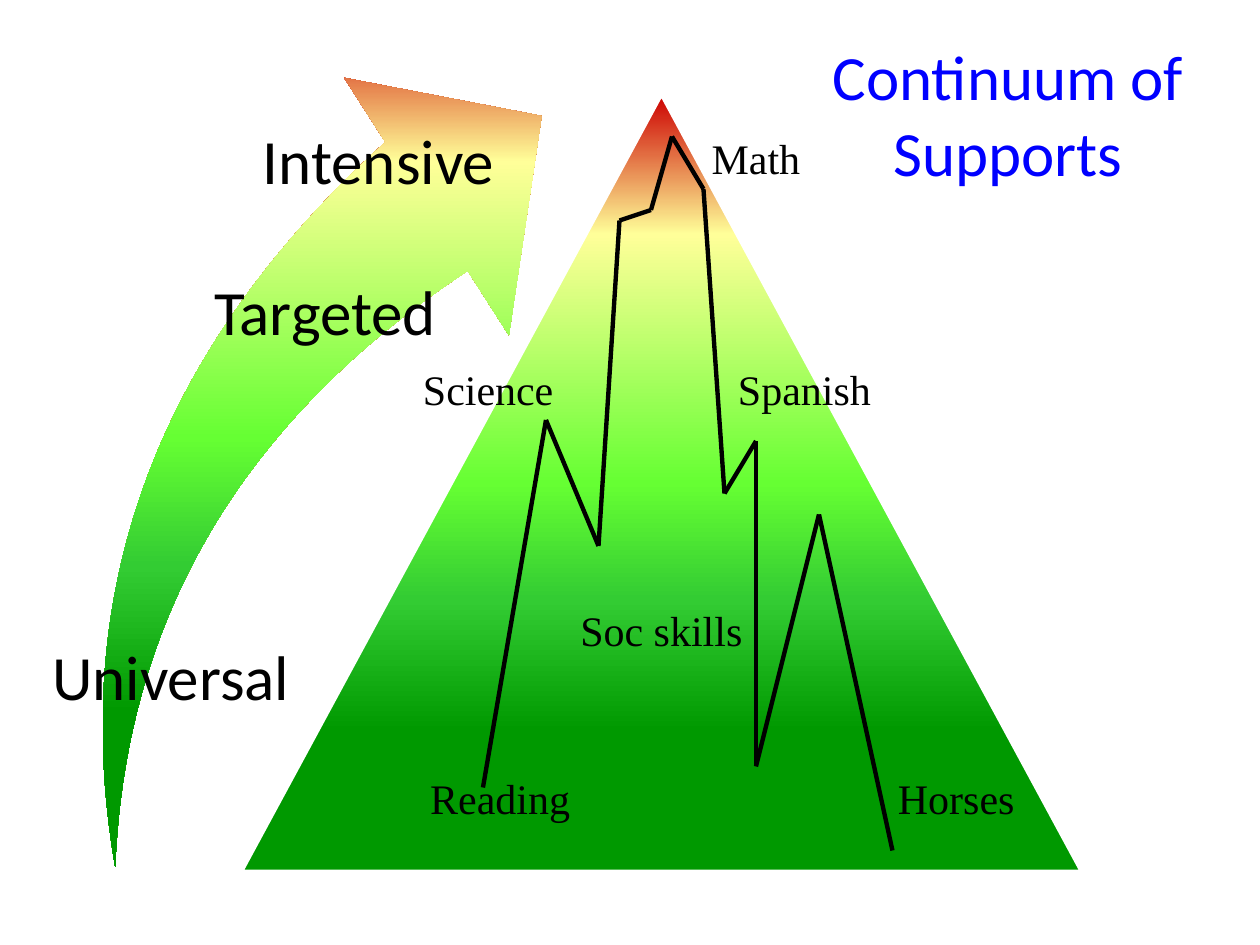
from itertools import pairwise

from lxml import etree
from pptx import Presentation
from pptx.dml.color import RGBColor
from pptx.enum import shapes, text
from pptx.oxml.ns import qn
from pptx.util import Pt

BLACK = RGBColor(0x00, 0x00, 0x00)
BLUE = RGBColor(0x00, 0x00, 0xFF)
WHITE = RGBColor(0xFF, 0xFF, 0xFF)

# Support levels from intensive (top) to universal (bottom): percent, colour
LEVELS = [
    (0, RGBColor(0xCC, 0x00, 0x00)),
    (18, RGBColor(0xFF, 0xFF, 0x99)),
    (50, RGBColor(0x66, 0xFF, 0x33)),
    (65, RGBColor(0x33, 0xCC, 0x33)),
    (82, RGBColor(0x00, 0x99, 0x00)),
]

# left, top, width, height, left inset
TIERS = {
    "Universal": (-8.6, 369.4, 206.6, 50.4, 5.8),
    "Targeted": (91.4, 160.6, 178.6, 49.7, 10.1),
    "Intensive": (118.1, 74.2, 182.2, 38.9, 14.4),
}

# left, top, width
SUBJECTS = {
    "Reading": (238.3, 438, 95),
    "Science": (234, 204, 90),
    "Math": (399, 72, 66),
    "Soc skills": (324, 342, 108),
    "Horses": (505.4, 438, 82),
    "Spanish": (414, 204, 91.4),
}

# Corners of the jagged profile, left to right
PROFILE = [
    (276, 450), (312, 240), (342, 312), (354, 126), (372, 120), (384, 78),
    (402, 108), (414, 282), (432, 252), (432, 438), (468, 294), (510, 486),
]


def place(sp, left, top, width, height):
    sp.left, sp.top, sp.width, sp.height = map(Pt, (left, top, width, height))


def write(sp, words, size, font="Calibri", color=BLACK, wrap=True,
          insets=(7.2, 3.6, 7.2, 3.6), spacing=1.0):
    tf = sp.text_frame
    tf.word_wrap = wrap
    tf.auto_size = text.MSO_AUTO_SIZE.NONE
    tf.vertical_anchor = text.MSO_ANCHOR.TOP
    tf.margin_left, tf.margin_top, tf.margin_right, tf.margin_bottom = map(Pt, insets)
    p = tf.paragraphs[0]
    p.alignment = text.PP_ALIGN.CENTER
    p.line_spacing = spacing
    r = p.add_run()
    r.text = words
    r.font.name, r.font.size, r.font.color.rgb = font, Pt(size), color


def add_label(s, words, box, **fmt):
    sp = s.shapes.add_textbox(*map(Pt, box))
    write(sp, words, **fmt)


def add_level_shape(s, kind, box, adjustments, rotation=0):
    """Shape filled with the support levels, always running straight down."""
    sp = s.shapes.add_shape(kind, *map(Pt, box))
    sp.shadow.inherit = False
    sp.rotation = rotation
    for i, value in enumerate(adjustments):
        sp.adjustments[i] = value
    sp.fill.gradient()
    grad = sp._element.spPr.find(qn("a:gradFill"))
    grad.set("rotWithShape", "0")
    stops = grad.find(qn("a:gsLst"))
    for stop in list(stops):
        stops.remove(stop)
    for percent, color in LEVELS:
        stop = etree.SubElement(stops, qn("a:gs"), pos=str(percent * 1000))
        etree.SubElement(stop, qn("a:srgbClr"), val=str(color))
    lin = grad.find(qn("a:lin"))
    lin.set("ang", str(90 * 60000))
    lin.set("scaled", "0")
    sp.line.fill.background()
    return sp


def add_profile(s, points):
    for start, end in pairwise(points):
        line = s.shapes.add_connector(
            shapes.MSO_CONNECTOR.STRAIGHT, *map(Pt, start + end))
        line.line.color.rgb = BLACK
        line.line.width = Pt(2.5)
        etree.SubElement(line._element.spPr, qn("a:effectLst"))


def main():
    prs = Presentation()
    prs.slide_width, prs.slide_height = Pt(720), Pt(540)
    s = prs.slides.add_slide(prs.slide_layouts[5])

    # Title
    place(s.shapes.title, 444, 18, 264, 94.3)
    write(s.shapes.title, "Continuum of Supports", size=36, color=BLUE)

    # Pyramid and swoosh
    pyramid = add_level_shape(
        s, shapes.MSO_SHAPE.TRAPEZOID, (138, 54, 480, 444), [0.541])
    pyramid.line.color.rgb = WHITE
    pyramid.line.width = Pt(2)
    add_level_shape(s, shapes.MSO_SHAPE.SWOOSH_ARROW,
                    (-31.7, 76.3, 408.2, 347), [0.25, 0.25], rotation=333.8)

    # Tier names along the swoosh
    for words, (*box, inset) in TIERS.items():
        add_label(s, words, box, size=36, insets=(inset, 0, 0, 0), spacing=0.9)

    # Student profile with its subjects
    add_profile(s, PROFILE)
    for words, (left, top, width) in SUBJECTS.items():
        add_label(s, words, (left, top, width, 36.4), size=24,
                  font="Times New Roman", wrap=False)

    prs.save("out.pptx")


if __name__ == "__main__":
    main()
